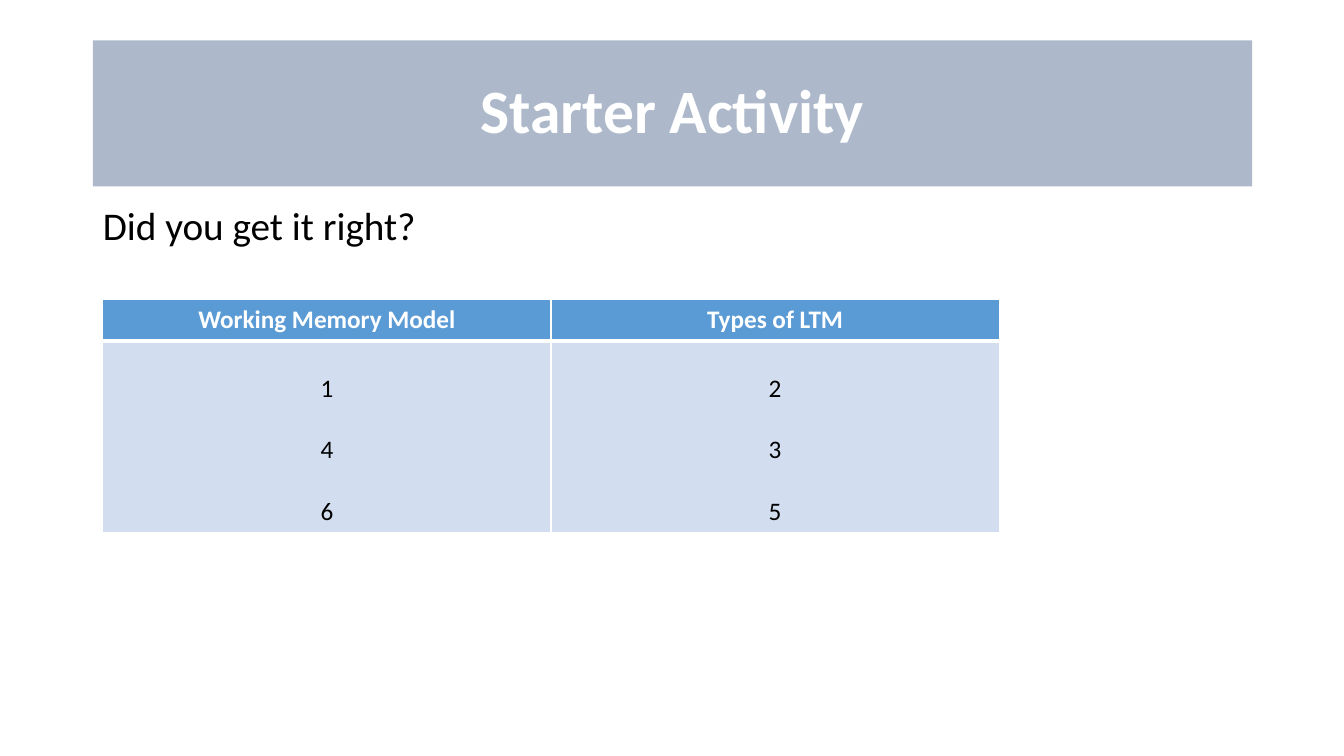
from lxml.etree import SubElement
from pptx import Presentation
from pptx.dml.color import RGBColor
from pptx.enum.text import MSO_ANCHOR, MSO_AUTO_SIZE, PP_ALIGN
from pptx.oxml import parse_xml
from pptx.oxml.ns import nsdecls, qn
from pptx.util import Inches, Pt

INK = {
    "band": "ADB9CA",
    "head": "5B9BD5",
    "cell": "D2DEEF",
    "white": "FFFFFF",
    "black": "000000",
}
GROUPS = {
    "Working Memory Model": ["1", "4", "6"],
    "Types of LTM": ["2", "3", "5"],
}
ROWS = [0.41, 1.9]


def color(name):
    return RGBColor.from_string(INK[name])


def place(shape, box):
    shape.left, shape.top, shape.width, shape.height = map(Inches, box)


def style(para, size, ink, bold=False):
    font = para.font
    font.name, font.size, font.bold = "Calibri", Pt(size), bold
    font.color.rgb = color(ink)


def add_title(slide, box, text):
    title = slide.shapes.title
    place(title, box)
    title.fill.solid()
    title.fill.fore_color.rgb = color("band")
    frame = title.text_frame
    frame.text = text
    frame.auto_size = MSO_AUTO_SIZE.NONE
    frame.vertical_anchor = MSO_ANCHOR.MIDDLE
    para = frame.paragraphs[0]
    para.alignment = PP_ALIGN.CENTER
    para.line_spacing = 0.9
    style(para, 44, "white", True)


def add_body(slide, box, text):
    body = slide.placeholders[1]
    place(body, box)
    frame = body.text_frame
    frame.text = text
    frame.auto_size = MSO_AUTO_SIZE.NONE
    frame.vertical_anchor = MSO_ANCHOR.TOP
    para = frame.paragraphs[0]
    para.alignment = PP_ALIGN.LEFT
    para.line_spacing = 0.9
    para.space_before = Pt(10)
    style(para, 28, "black")
    props = para._p.get_or_add_pPr()
    props.set("marL", "0")
    props.set("indent", "0")
    SubElement(props, qn("a:buNone"))


def add_edges(cell, top, bottom):
    props = cell._tc.get_or_add_tcPr()
    widths = {"lnL": 1, "lnR": 1, "lnT": top, "lnB": bottom}
    for spot, (tag, width) in enumerate(widths.items()):
        props.insert(spot, parse_xml(
            f'<a:{tag} {nsdecls("a")} w="{Pt(width)}"><a:solidFill>'
            f'<a:srgbClr val="{INK["white"]}"/></a:solidFill></a:{tag}>'))


def fill_cell(cell, lines, fill, ink, bold, edges):
    cell.fill.solid()
    cell.fill.fore_color.rgb = color(fill)
    add_edges(cell, *edges)
    cell.text = "\n".join(lines)
    cell.vertical_anchor = MSO_ANCHOR.BOTTOM
    for order, para in enumerate(cell.text_frame.paragraphs):
        para.alignment = PP_ALIGN.CENTER
        para.space_before = Pt(22 if order else 0)
        style(para, 18, ink, bold)


def add_answers(slide, box):
    table = slide.shapes.add_table(
        len(ROWS), len(GROUPS), *map(Inches, box)).table
    for row, height in zip(table.rows, ROWS):
        row.height = Inches(height)
    for col, (name, items) in enumerate(GROUPS.items()):
        fill_cell(table.cell(0, col), [name], "head", "white", True, (1, 3))
        fill_cell(table.cell(1, col), items, "cell", "black", False, (3, 1))


def main():
    deck = Presentation()
    deck.slide_width, deck.slide_height = Inches(13.33), Inches(7.5)
    slide = deck.slides.add_slide(deck.slide_layouts[1])
    add_title(slide, (0.92, 0.4, 11.5, 1.45), "Starter Activity")
    add_body(slide, (0.92, 2, 11.5, 4.76), "Did you get it right?")
    add_answers(slide, (1.02, 2.97, 8.89, sum(ROWS)))
    deck.save("out.pptx")


if __name__ == "__main__":
    main()
